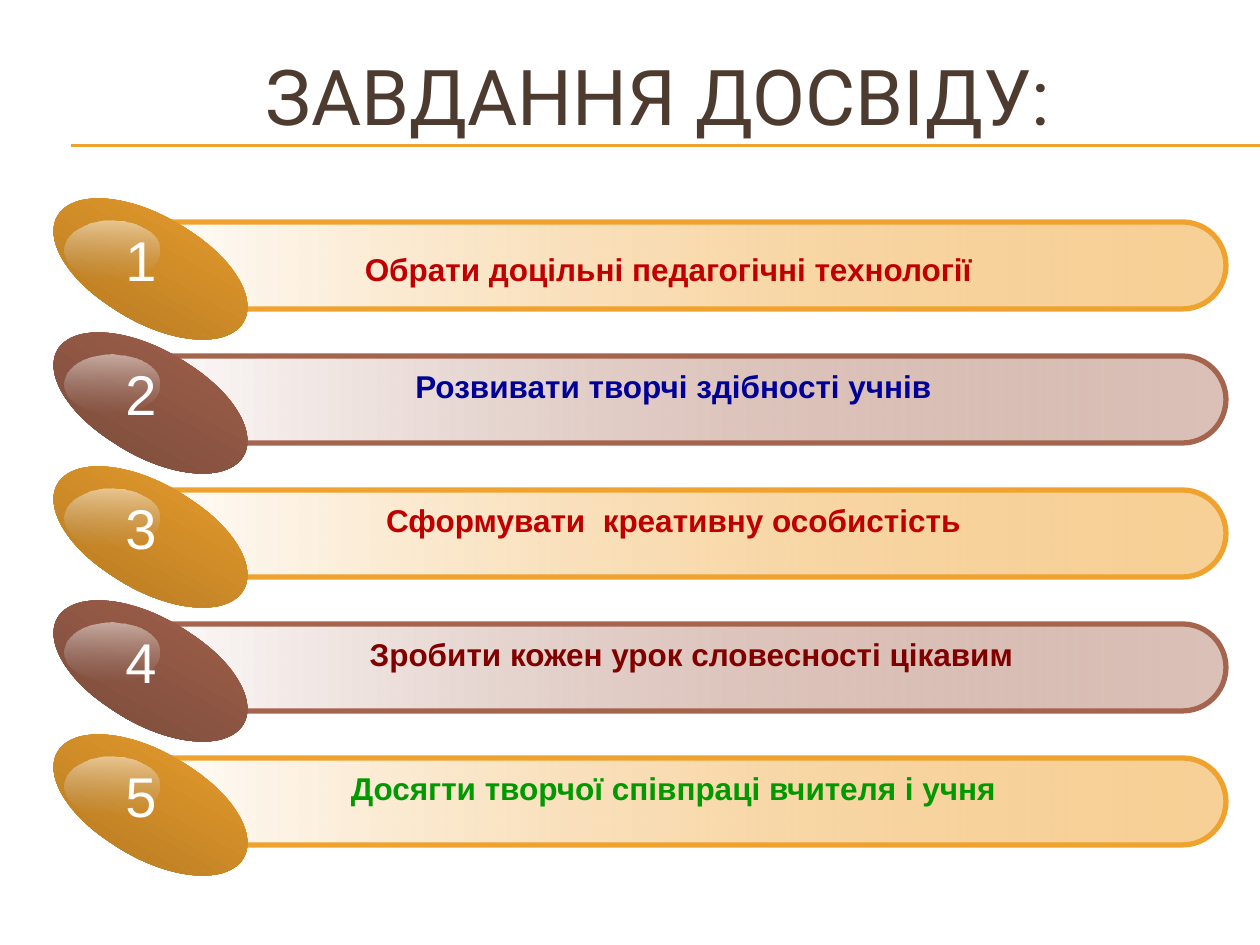
from pptx import Presentation
from pptx.dml.color import RGBColor
from pptx.enum.shapes import MSO_CONNECTOR, MSO_SHAPE
from pptx.enum.text import MSO_ANCHOR, PP_ALIGN
from pptx.oxml.ns import qn
from pptx.util import Pt
from lxml.etree import SubElement

PX = 914400 / 126
SIZE = (1260, 945)
TITLE = "ЗАВДАННЯ ДОСВІДУ:"
RULES = (145, 146)
ROW_PITCH = 134
GOLD = {"main": "F0A22E", "dark": "AC7421", "opacity": 50}
BROWN = {"main": "A5644E", "dark": "764838", "opacity": 40}
# text, text colour, theme, shift from the common text place
TASKS = [
    ("Обрати доцільні педагогічні технології", "C00000", GOLD, (-5, 17)),
    ("Розвивати творчі здібності учнів", "000099", BROWN, (0, 0)),
    ("Сформувати  креативну особистість", "C00000", GOLD, (0, 0)),
    ("Зробити кожен урок словесності цікавим", "800000", BROWN, (18, 0)),
    ("Досягти творчої співпраці вчителя і учня", "009900", GOLD, (0, 0)),
]


def emu(*lengths):
    return [round(length * PX) for length in lengths]


def color(value):
    return RGBColor.from_string(value)


def add_shape(slide, kind, box, stops, angle, line=None, rotation=0):
    shape = slide.shapes.add_shape(kind, *emu(*box))
    shape.shadow.inherit = False
    shape.rotation = rotation
    shape.fill.gradient()
    shape.fill.gradient_angle = angle
    for stop, (value, opacity) in zip(shape.fill.gradient_stops, stops):
        stop.color.rgb = color(value)
    for element, (value, opacity) in zip(shape._element.spPr.iter(qn("a:srgbClr")), stops):
        if opacity < 100:
            SubElement(element, qn("a:alpha"), val=str(opacity * 1000))
    if line:
        shape.line.color.rgb = color(line)
        shape.line.width = Pt(3)
    else:
        shape.line.fill.background()
    return shape


def add_text(slide, text, box, font, size, value, bold=False,
             align=PP_ALIGN.CENTER, anchor=MSO_ANCHOR.TOP, wrap=True):
    text_frame = slide.shapes.add_textbox(*emu(*box)).text_frame
    text_frame.text = text
    text_frame.word_wrap = wrap
    text_frame.vertical_anchor = anchor
    paragraph = text_frame.paragraphs[0]
    paragraph.alignment = align
    run_font = paragraph.runs[0].font
    run_font.name, run_font.size, run_font.bold = font, Pt(size), bold
    run_font.color.rgb = color(value)


def add_rule(slide, y):
    line = slide.shapes.add_connector(MSO_CONNECTOR.STRAIGHT, *emu(71, y, SIZE[0], y))
    line.line.color.rgb = color(GOLD["main"])
    line.line.width = Pt(0.75)
    SubElement(line._element.spPr, qn("a:effectLst"))


def add_task(slide, number, text, value, theme, shift):
    top = 222 + (number - 1) * ROW_PITCH
    dx, dy = shift
    bar = add_shape(slide, MSO_SHAPE.ROUNDED_RECTANGLE, (131, top, 1095, 87),
                    [("FFFFFF", 100), (theme["main"], theme["opacity"])], 0, theme["main"])
    bar.adjustments[0] = 0.5
    for left, offset in ((50, -4), (44, -8)):
        add_shape(slide, MSO_SHAPE.OVAL, (left, top + offset, 207, 106),
                  [(theme["main"], 100), (theme["dark"], 100)], 270, rotation=29.3)
    add_shape(slide, MSO_SHAPE.OVAL, (65, top - 1, 94, 59),
              [("FFFFFF", 50), ("B6B6B6", 0)], 270)
    add_text(slide, text, (238 + dx, top + 5 + dy, 871, 50), "Arial", 18, value, bold=True)
    add_text(slide, str(number), (113, top - 3, 62, 101), "Arial", 32, "FFFFFF",
             align=PP_ALIGN.LEFT, wrap=False)


def main():
    """Build the slide with a title and five numbered task bars."""
    presentation = Presentation()
    presentation.slide_width, presentation.slide_height = emu(*SIZE)
    slide = presentation.slides.add_slide(presentation.slide_layouts[6])
    for y in RULES:
        add_rule(slide, y)
    add_text(slide, TITLE, (60, 37, 1197, 116), "Roboto", 44, "4E3B30",
             anchor=MSO_ANCHOR.MIDDLE)
    for number, task in enumerate(TASKS, 1):
        add_task(slide, number, *task)
    presentation.save("out.pptx")


if __name__ == "__main__":
    main()
